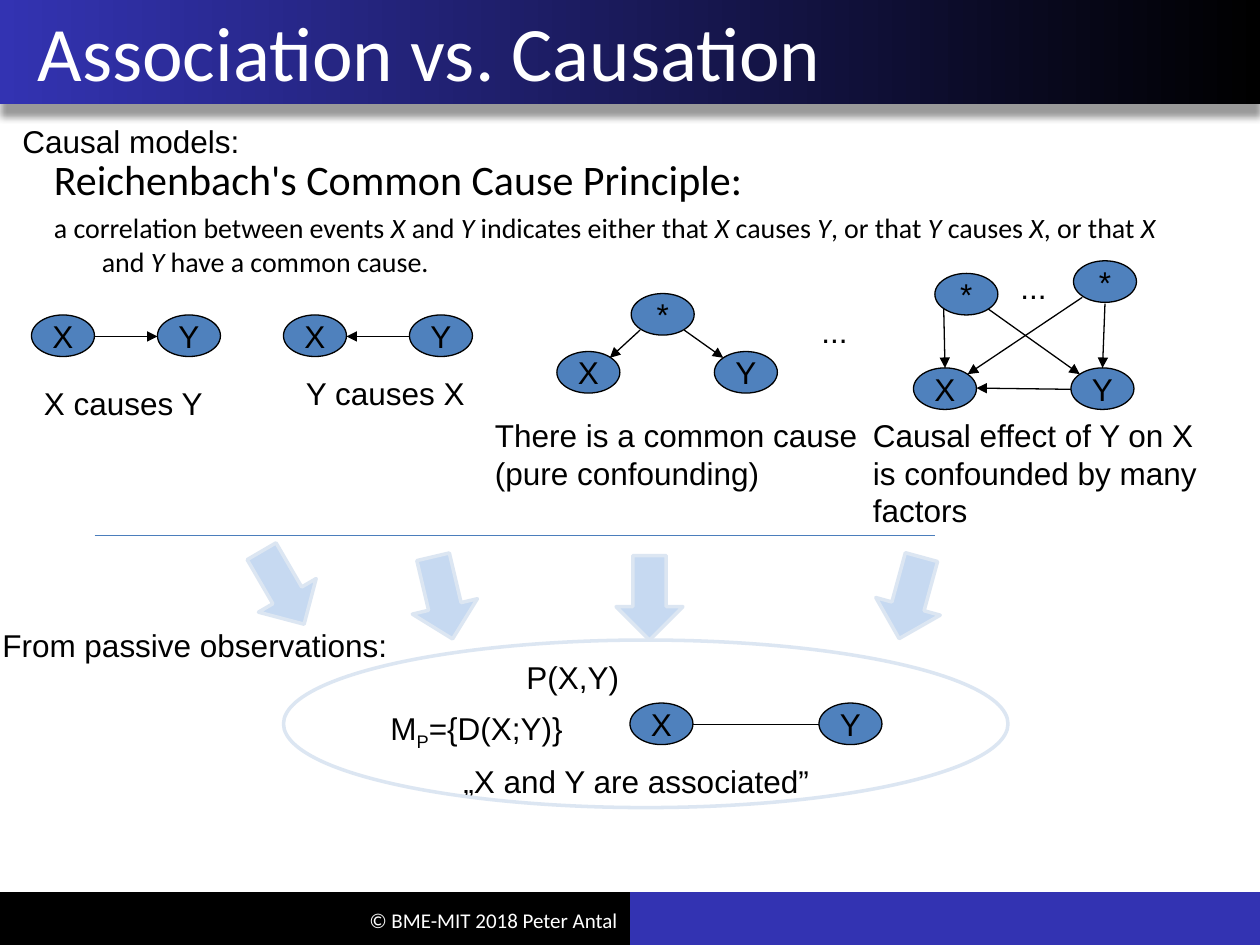
"""Build the slide on association versus causation."""
from lxml import etree
from pptx import Presentation
from pptx.dml.color import RGBColor
from pptx.enum.shapes import MSO_CONNECTOR, MSO_SHAPE
from pptx.enum.text import MSO_ANCHOR, PP_ALIGN
from pptx.oxml import parse_xml
from pptx.oxml.ns import qn
from pptx.util import Inches, Pt

color = RGBColor.from_string

deck = Presentation()
deck.slide_width, deck.slide_height = Inches(10), Inches(7.5)
page = deck.slides.add_slide(deck.slide_layouts[6])


def add_text(left, top, width, height, lines, size=18, name="Arial", tint="000000", wrap=False):
    box = page.shapes.add_textbox(Inches(left), Inches(top), Inches(width), Inches(height))
    box.text_frame.word_wrap = wrap
    box.text_frame.text = lines
    for para in box.text_frame.paragraphs:
        para.font.size = Pt(size)
        para.font.name = name
        para.font.color.rgb = color(tint)
    return box


def add_line(x1, y1, x2, y2, tint="000000", arrow=True):
    line = page.shapes.add_connector(
        MSO_CONNECTOR.STRAIGHT, Inches(x1), Inches(y1), Inches(x2), Inches(y2))
    line.line.color.rgb = color(tint)
    line.line.width = Pt(0.75)
    if arrow:
        etree.SubElement(line.line._get_or_add_ln(), qn("a:tailEnd"), type="triangle")
    etree.SubElement(line._element.spPr, qn("a:effectLst"))


bars = []
for left, top, width, height, fill in [
    (5, 7.08, 5, 0.42, "3333B2"),
    (0, 7.08, 5, 0.42, "000000"),
    (0, 0, 10, 0.83, "3333B2"),
]:
    bar = page.shapes.add_shape(
        MSO_SHAPE.RECTANGLE, Inches(left), Inches(top), Inches(width), Inches(height))
    bar.shadow.inherit = False
    bar.fill.solid()
    bar.fill.fore_color.rgb = color(fill)
    bar.line.fill.background()
    bars.append(bar)

header = bars[-1]
header.fill.gradient()
header.fill.gradient_angle = 180
for stop, tint in zip(header.fill.gradient_stops, ("000000", "3333B2")):
    stop.color.rgb = color(tint)
header._element.spPr.find(qn("a:effectLst")).append(parse_xml(
    '<a:outerShdw xmlns:a="http://schemas.openxmlformats.org/drawingml/2006/main" '
    'blurRad="50800" dist="88900" dir="5400000" algn="t" rotWithShape="0">'
    '<a:srgbClr val="000000"><a:alpha val="40000"/></a:srgbClr></a:outerShdw>'))

footer = add_text(1.17, 7.1, 3.83, 0.4, "© BME-MIT 2018 Peter Antal", 12, "Calibri", "FFFFFF", True)
footer.text_frame.vertical_anchor = MSO_ANCHOR.MIDDLE
footer.text_frame.paragraphs[0].alignment = PP_ALIGN.RIGHT

title = add_text(0, 0, 9.85, 0.81, "Association vs. Causation", 44, "Calibri", "FFFFFF", True)
title.text_frame.vertical_anchor = MSO_ANCHOR.MIDDLE
title.text_frame.paragraphs[0]._p.get_or_add_pPr().set("marL", str(Inches(0.2)))

body = add_text(0.33, 1.17, 9.17, 5.53, "Reichenbach's Common Cause Principle:\n",
                24, "Calibri", wrap=True)
principle = body.text_frame.paragraphs[1]
principle.font.size = Pt(16)
principle.space_before = Pt(4)
sentence = ("a correlation between events |X| and |Y| indicates either that |X| causes |Y|, "
            "or that |Y| causes |X|, or that |X| and |Y| have a common cause.")
for words in sentence.split("|"):
    span = principle.add_run()
    span.text = words
    span.font.italic = words in ("X", "Y")
for para in body.text_frame.paragraphs:
    properties = para._p.get_or_add_pPr()
    properties.set("marL", str(Inches(0.38)))
    properties.set("indent", str(-Inches(0.38)))

add_line(0.75, 4.25, 7.42, 4.25, "4B7EBC", arrow=False)

for label, left, top in [
    ("X", 0.25, 2.5), ("Y", 1.25, 2.5),
    ("X", 2.25, 2.5), ("Y", 3.25, 2.5),
    ("X", 4.42, 2.79), ("*", 5.01, 2.33), ("Y", 5.67, 2.79),
    ("X", 7.25, 2.92), ("*", 7.42, 2.17), ("Y", 8.5, 2.92), ("*", 8.52, 2.07),
    ("X", 5, 5.58), ("Y", 6.5, 5.58),
]:
    node = page.shapes.add_shape(
        MSO_SHAPE.OVAL, Inches(left), Inches(top), Inches(0.5), Inches(0.33))
    node.shadow.inherit = False
    node.fill.solid()
    node.fill.fore_color.rgb = color("4F81BD")
    node.line.color.rgb = color("000000")
    node.line.width = Pt(0.75)
    node.text_frame.word_wrap = False
    node.text_frame.vertical_anchor = MSO_ANCHOR.MIDDLE
    node.text_frame.text = label
    para = node.text_frame.paragraphs[0]
    para.alignment = PP_ALIGN.CENTER
    para.font.size = Pt(18)
    para.font.name = "Arial"
    para.font.color.rgb = color("000000")

for ends in [
    (0.75, 2.67, 1.25, 2.67),
    (3.25, 2.67, 2.75, 2.67),
    (5.08, 2.62, 4.84, 2.84),
    (5.43, 2.62, 5.74, 2.84),
    (7.49, 2.45, 7.5, 2.92),
    (7.84, 2.45, 8.57, 2.97),
    (8.59, 2.36, 7.68, 2.97),
    (8.77, 2.41, 8.75, 2.92),
    (8.5, 3.09, 7.75, 3.08),
]:
    add_line(*ends)
add_line(5.5, 5.75, 6.5, 5.75, arrow=False)

for left, top, rotation in [
    (4.89, 4.41, 0), (1.98, 4.33, 329.8), (3.25, 4.41, 346.7), (6.96, 4.41, 15.3),
]:
    arrow = page.shapes.add_shape(
        MSO_SHAPE.DOWN_ARROW, Inches(left), Inches(top), Inches(0.53), Inches(0.67))
    arrow.rotation = rotation
    arrow.shadow.inherit = False
    arrow.fill.solid()
    arrow.fill.fore_color.rgb = color("C6D9F1")
    arrow.line.color.rgb = color("DCE6F2")
    arrow.line.width = Pt(2)

for left, top, width, words in [
    (8, 2.08, 0.41, "..."),
    (6.42, 2.43, 0.41, "..."),
    (0.08, 0.92, 1.94, "Causal models:"),
    (0.25, 3, 1.47, "X causes Y"),
    (2.33, 2.92, 1.47, "Y causes X"),
    (4.08, 5.17, 1.02, "P(X,Y)"),
    (-0.08, 4.92, 3.29, "From passive observations:"),
    (3.58, 6, 2.97, "„X and Y are associated”"),
]:
    add_text(left, top, width, 0.4, words)
add_text(3.83, 3.25, 3.17, 0.71, "There is a common cause (pure confounding)", wrap=True)
add_text(6.83, 3.25, 3.17, 1.01,
         "Causal effect of Y on X\nis confounded by many factors", wrap=True)

model = add_text(3, 5.58, 1.67, 0.4, "M").text_frame.paragraphs[0]
subscript = model.add_run()
subscript.text = "P"
subscript.font._element.set("baseline", "-25000")
model.add_run().text = "={D(X;Y)}"

outline = page.shapes.add_shape(
    MSO_SHAPE.OVAL, Inches(2.25), Inches(5.08), Inches(5.75), Inches(1.33))
outline.shadow.inherit = False
outline.fill.background()
outline.line.color.rgb = color("DCE6F2")
outline.line.width = Pt(2)

deck.save("out.pptx")
